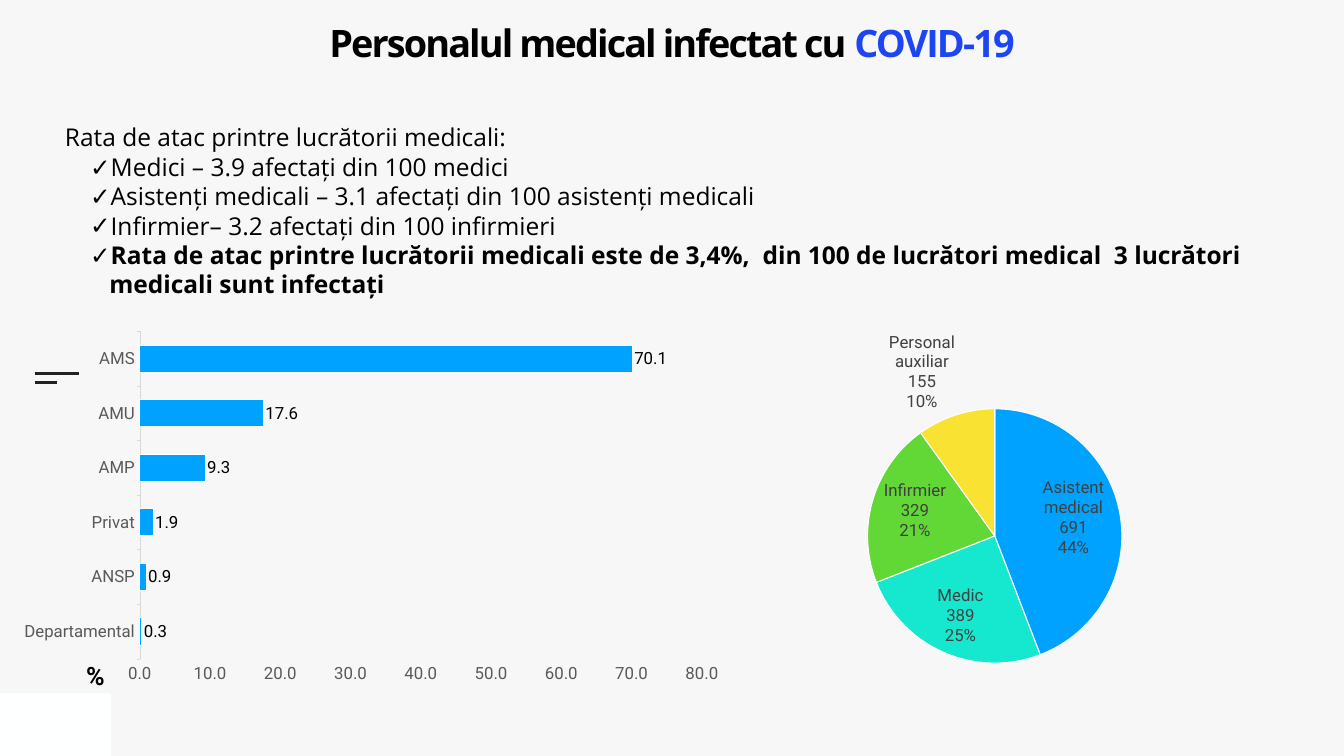
from lxml import etree
from pptx import Presentation, util as u
from pptx.chart.data import CategoryChartData
from pptx.dml.color import RGBColor
from pptx.enum import chart as ch, shapes, text
from pptx.oxml import parse_xml
from pptx.oxml.ns import nsdecls, qn

WIDE, HIGH = 26.67, 15
PAPER = RGBColor(0xF7, 0xF7, 0xF7)
WHITE = RGBColor(0xFF, 0xFF, 0xFF)
PATCH = RGBColor(0xFE, 0xFF, 0xFF)
BLACK = RGBColor(0, 0, 0)
INK = RGBColor(0x22, 0x22, 0x22)
GREY = RGBColor(0x59, 0x59, 0x59)
DARK = RGBColor(0x40, 0x40, 0x40)
PALE = RGBColor(0xD9, 0xD9, 0xD9)
ROYAL = RGBColor(0x1D, 0x46, 0xF3)
BLUE = RGBColor(0x00, 0xA2, 0xFF)
TEAL = RGBColor(0x16, 0xE7, 0xCF)
GREEN = RGBColor(0x61, 0xD8, 0x36)
YELLOW = RGBColor(0xFA, 0xE2, 0x32)

UNITS = [("AMS", 70.1), ("AMU", 17.6), ("AMP", 9.3),
         ("Privat", 1.9), ("ANSP", 0.9), ("Departamental", 0.3)]
STAFF = [("Asistent medical", 691, BLUE), ("Medic", 389, TEAL),
         ("Infirmier", 329, GREEN), ("Personal auxiliar", 155, YELLOW)]
INTRO = "Rata de atac printre lucrătorii medicali:"
RATES = ["Medici – 3.9 afectați din 100 medici",
         "Asistenți medicali – 3.1 afectați din 100 asistenți medicali",
         "Infirmier– 3.2 afectați din 100 infirmieri"]
TOTAL = ("Rata de atac printre lucrătorii medicali este de 3,4%,  din 100 de "
         "lucrători medical  3 lucrători medicali sunt infectați")


def inches(*sizes):
    return [u.Inches(s) for s in sizes]


def put(item, **vals):
    for name, val in vals.items():
        setattr(item, name, val)


def style(font, size, color, name="Roboto", bold=False):
    put(font, size=u.Pt(size), name=name, bold=bold)
    font.color.rgb = color


def add_run(para, words, size, color=BLACK, name="Open Sans", bold=False):
    run = para.add_run()
    run.text = words
    style(run.font, size, color, name, bold)
    return run


def add_box(slide, box, inset=None, **vals):
    frame = slide.shapes.add_textbox(*inches(*box)).text_frame
    put(frame, word_wrap=True, **vals)
    if inset is not None:
        sides = ("left", "top", "right", "bottom")
        put(frame, **{f"margin_{side}": u.Inches(inset) for side in sides})
    return frame


def add_rule(slide, left, top, wide):
    rule = slide.shapes.add_connector(
        shapes.MSO_CONNECTOR.STRAIGHT, *inches(left, top, left + wide, top))
    rule.line.color.rgb = INK
    rule.line.width = u.Pt(3)
    etree.SubElement(rule._element.spPr, qn("a:effectLst"))


def add_patch(slide):
    patch = slide.shapes.add_shape(
        shapes.MSO_SHAPE.RECTANGLE, *inches(0, HIGH - 1.24, 2.2, 1.24))
    patch.shadow.inherit = False
    patch.fill.solid()
    patch.fill.fore_color.rgb = PATCH
    patch.line.fill.background()


def add_title(slide):
    para = add_box(slide, (0, 0.56, WIDE, 0.81), 0).paragraphs[0]
    put(para, alignment=text.PP_ALIGN.CENTER, line_spacing=0.8)
    for words, color in (("Personalul medical infectat cu ", BLACK),
                         ("COVID-19", ROYAL)):
        run = add_run(para, words, 54, color, bold=True)
        run.font._element.set("spc", "-270")


def add_tick(para):
    """Give the paragraph a check mark and a hanging indent."""
    para.level = 1
    props = para._p.get_or_add_pPr()
    props.set("marL", str(u.Inches(0.88)))
    props.set("indent", str(u.Inches(-0.38)))
    etree.SubElement(props, qn("a:buFont")).set("typeface", "Open Sans")
    etree.SubElement(props, qn("a:buChar")).set("char", "✓")


def add_rates(slide):
    frame = add_box(slide, (1.19, 2.38, WIDE - 1.19, 3.05))
    add_run(frame.paragraphs[0], INTRO, 35)
    for words in RATES + [TOTAL]:
        para = frame.add_paragraph()
        add_tick(para)
        add_run(para, words, 35, bold=words == TOTAL)


def add_chart(slide, kind, box, rows, plot):
    """Add a one-series chart; plot is the inner area in shares of the box."""
    data = CategoryChartData()
    data.categories = [row[0] for row in rows]
    data.add_series("Series 1", [row[1] for row in rows])
    chart = slide.shapes.add_chart(kind, *inches(*box), data).chart
    put(chart, has_legend=False, has_title=False)
    style(chart.font, 24, BLACK)
    area = chart._chartSpace.chart.plotArea
    for old in area.findall(qn("c:layout")):
        area.remove(old)
    spots = "".join(f'<c:{k} val="{v}"/>' for k, v in zip("xywh", plot))
    area.insert(0, parse_xml(
        f'<c:layout {nsdecls("c")}><c:manualLayout><c:layoutTarget val="inner"/>'
        '<c:xMode val="edge"/><c:yMode val="edge"/>'
        f'{spots}</c:manualLayout></c:layout>'))
    return chart


def add_labels(plot, color, **vals):
    plot.has_data_labels = True
    labels = plot.data_labels
    put(labels, **vals)
    style(labels.font, 24, color)
    return labels


def add_bars(slide):
    chart = add_chart(slide, ch.XL_CHART_TYPE.BAR_CLUSTERED,
                      (0.2, 6.43, 14.3, 7.3), UNITS[::-1],
                      (0.18, 0.02, 0.78, 0.89))
    plot = chart.plots[0]
    put(plot, gap_width=100, vary_by_categories=False)
    bars = plot.series[0].format
    bars.fill.solid()
    bars.fill.fore_color.rgb = BLUE
    bars.line.color.rgb = WHITE
    bars.line.width = u.Pt(1.5)
    add_labels(plot, BLACK, show_value=True, number_format="0.0",
               number_format_is_linked=False,
               position=ch.XL_LABEL_POSITION.OUTSIDE_END)
    for axis in (chart.category_axis, chart.value_axis):
        put(axis, has_major_gridlines=False,
            major_tick_mark=ch.XL_TICK_MARK.OUTSIDE)
        style(axis.tick_labels.font, 24, GREY)
    line = chart.category_axis.format.line
    line.color.rgb = PALE
    line.width = u.Pt(0.75)
    scale = chart.value_axis
    put(scale, minimum_scale=0, maximum_scale=80, major_unit=10)
    put(scale.tick_labels, number_format="0.0", number_format_is_linked=False)
    scale.format.line.fill.background()


def add_pie(slide):
    chart = add_chart(slide, ch.XL_CHART_TYPE.PIE, (14, 6.43, 11.48, 8.01),
                      STAFF, (0.28, 0.21, 0.44, 0.63))
    plot = chart.plots[0]
    plot.vary_by_categories = True
    for i, (_, _, color) in enumerate(STAFF):
        slice_ = plot.series[0].points[i].format
        slice_.fill.solid()
        slice_.fill.fore_color.rgb = color
        slice_.line.color.rgb = WHITE
        slice_.line.width = u.Pt(1.5)
    labels = add_labels(plot, DARK, show_value=True, show_percentage=True,
                        show_category_name=True,
                        position=ch.XL_LABEL_POSITION.BEST_FIT)
    break_ = etree.Element(qn("c:separator"))
    break_.text = "\n"
    labels._element.find(qn("c:showBubbleSize")).addnext(break_)


def add_unit(slide):
    frame = add_box(slide, (0, 13.05, 3.79, 0.72), 0.06,
                    vertical_anchor=text.MSO_ANCHOR.MIDDLE)
    para = frame.paragraphs[0]
    para.alignment = text.PP_ALIGN.CENTER
    add_run(para, "%", 36, name="Roboto", bold=True)


def main():
    deck = Presentation()
    put(deck, slide_width=u.Inches(WIDE), slide_height=u.Inches(HIGH))
    slide = deck.slides.add_slide(deck.slide_layouts[6])
    slide.background.fill.solid()
    slide.background.fill.fore_color.rgb = PAPER
    add_patch(slide)
    add_rule(slide, 0.69, 7.41, 0.88)
    add_rule(slide, 0.69, 7.59, 0.44)
    add_bars(slide)
    add_title(slide)
    add_rates(slide)
    add_unit(slide)
    add_pie(slide)
    deck.save("out.pptx")


if __name__ == "__main__":
    main()
